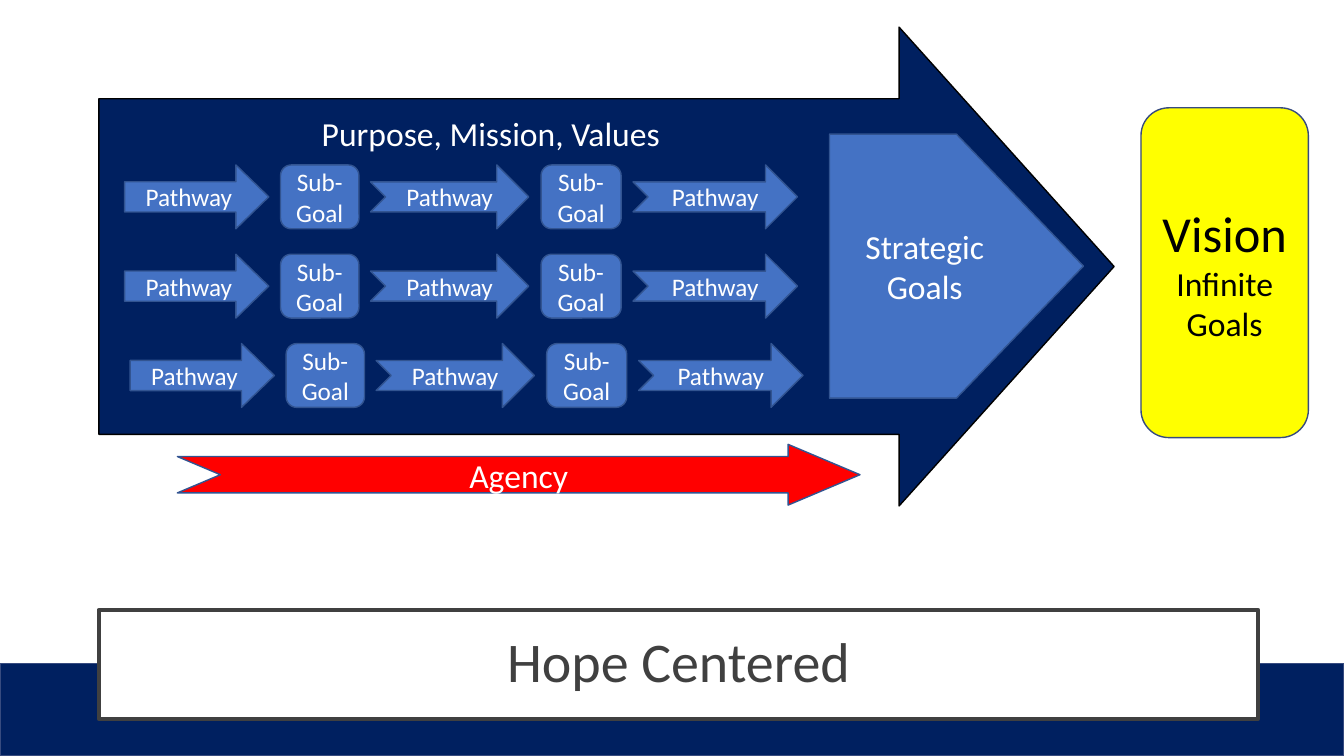
from pptx import Presentation
from pptx.dml.color import RGBColor
from pptx.enum.shapes import MSO_SHAPE
from pptx.enum.text import MSO_ANCHOR, PP_ALIGN
from pptx.util import Pt

COLORS = {
    "navy": "002060", "blue": "4472C4", "blue_edge": "325491", "dark_edge": "374B7F",
    "gray": "404040", "white": "FFFFFF", "black": "000000", "red": "FF0000", "yellow": "FFFF00",
}


def add_text(shape, lines, color):
    frame = shape.text_frame
    frame.word_wrap = True
    for index, (text, size) in enumerate(lines):
        paragraph = frame.add_paragraph() if index else frame.paragraphs[0]
        paragraph.alignment = PP_ALIGN.CENTER
        run = paragraph.add_run()
        run.text = text
        run.font.name = "Calibri"
        run.font.size = Pt(size)
        run.font.color.rgb = RGBColor.from_string(COLORS[color])


def add_block(shapes, kind, box, fill, edge, lines=(), color="white", adjustments=(), weight=1):
    shape = shapes.add_shape(kind, *[Pt(length) for length in box])
    shape.shadow.inherit = False
    shape.fill.solid()
    shape.fill.fore_color.rgb = RGBColor.from_string(COLORS[fill])
    shape.line.color.rgb = RGBColor.from_string(COLORS[edge])
    shape.line.width = Pt(weight)
    for index, value in enumerate(adjustments):
        shape.adjustments[index] = value
    shape.text_frame.vertical_anchor = MSO_ANCHOR.MIDDLE
    add_text(shape, lines, color)
    return shape


presentation = Presentation()
presentation.slide_width = Pt(960)
presentation.slide_height = Pt(540)
slide = presentation.slides.add_slide(presentation.slide_layouts[6])
shapes = slide.shapes

add_block(shapes, MSO_SHAPE.RECTANGLE, (0, 474, 960, 66), "navy", "dark_edge")
title = add_block(shapes, MSO_SHAPE.RECTANGLE, (70.6, 435.6, 828, 77.8), "white", "gray",
                  [("Hope Centered", 40)], "gray", weight=3)
title.text_frame.paragraphs[0].line_spacing = 0.9

add_block(shapes, MSO_SHAPE.RIGHT_ARROW, (70.6, 19.4, 725.2, 342), "navy", "black",
          adjustments=(0.701, 0.449))
heading = shapes.add_textbox(Pt(137.5), Pt(77), Pt(426.2), Pt(36))
add_text(heading, [("Purpose, Mission, Values", 24)], "white")
add_block(shapes, MSO_SHAPE.PENTAGON, (592.5, 95.8, 181.4, 188.6), "blue", "blue_edge",
          [("Strategic Goals", 24)], adjustments=(0.5,))

steps = [
    (MSO_SHAPE.RIGHT_ARROW, 89, 103, "Pathway", (0.473, 0.515)),
    (MSO_SHAPE.ROUNDED_RECTANGLE, 200.4, 56, "Sub- Goal", ()),
    (MSO_SHAPE.NOTCHED_RIGHT_ARROW, 264.7, 113, "Pathway", (0.47, 0.5)),
    (MSO_SHAPE.ROUNDED_RECTANGLE, 386.5, 57.2, "Sub- Goal", ()),
    (MSO_SHAPE.NOTCHED_RIGHT_ARROW, 452.2, 117.4, "Pathway", (0.47, 0.5)),
]
for row, indent in enumerate((0, 0, 4)):
    pathway_row = shapes.add_group_shape()
    for kind, left, width, label, adjustments in steps:
        add_block(pathway_row.shapes, kind, (left + indent, 117.8 + 63.8 * row, width, 45.6),
                  "blue", "blue_edge", [(label, 18)], adjustments=adjustments)

add_block(shapes, MSO_SHAPE.NOTCHED_RIGHT_ARROW, (126.7, 317.4, 487.6, 43.4), "red", "blue_edge",
          [("Agency", 24)], adjustments=(0.598, 1.183))
add_block(shapes, MSO_SHAPE.ROUNDED_RECTANGLE, (815, 77, 119.6, 235.6), "yellow", "dark_edge",
          [("Vision", 36), ("Infinite Goals", 24)], "black")

presentation.save("out.pptx")
